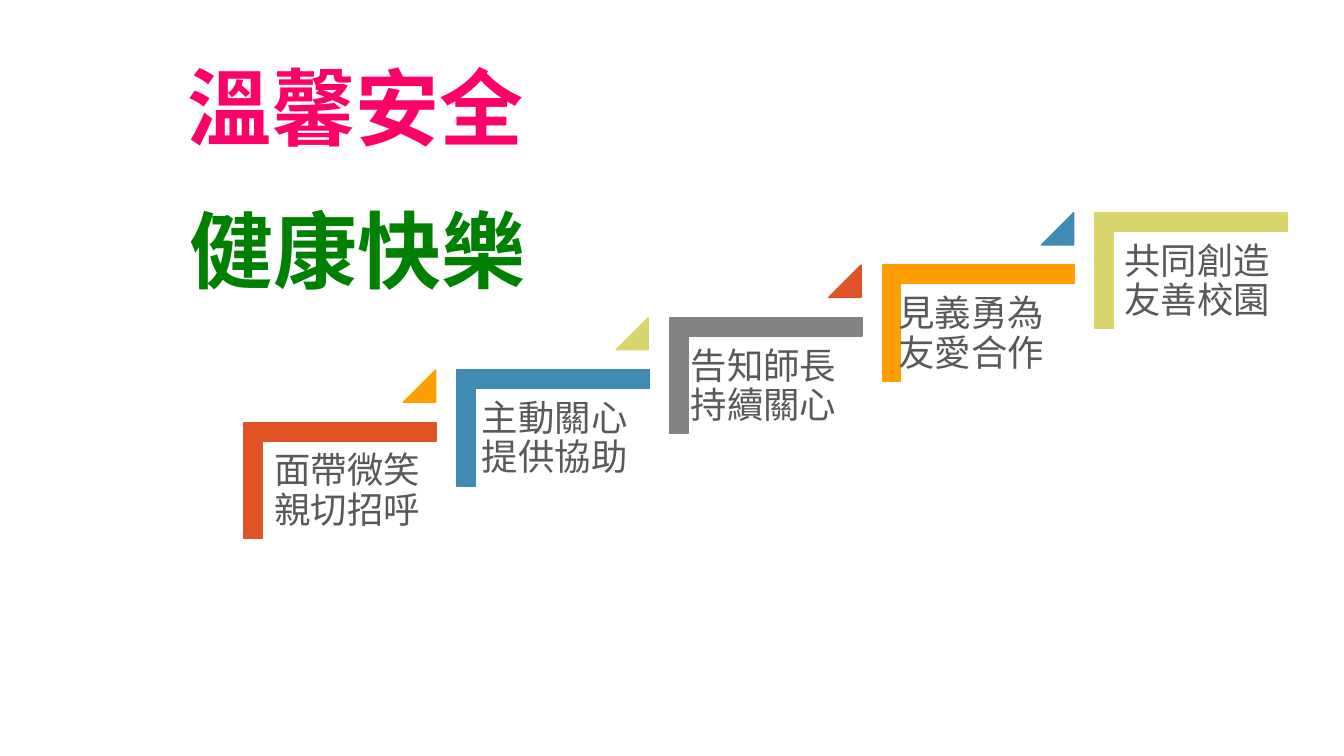
from lxml import etree
from pptx import Presentation
from pptx import util as u
from pptx.dml.color import RGBColor
from pptx.enum import shapes, text
from pptx.oxml import ns

FONT = "Noto Sans CJK SC"
STEP_ACROSS, STEP_UP = 2.11, 0.52
CORNER_WIDTH, CORNER_HEIGHT, CORNER_ADJUST = 1.15, 1.91, 0.16
TRIANGLE = 0.32


def paint(item, color):
    item.fill.solid()
    item.fill.fore_color.rgb = RGBColor.from_string(color)
    item.line.color.rgb = RGBColor.from_string(color)
    item.line.width = u.Pt(1)
    item.shadow.inherit = False


def write(page, words, place, size, color, bold=False):
    box = page.shapes.add_textbox(*[u.Inches(length) for length in place])
    frame = box.text_frame
    frame.word_wrap = True
    frame.text = words
    para = frame.paragraphs[0]
    para.line_spacing = 0.9
    span = para.runs[0]
    span.font.size = u.Pt(size)
    span.font.bold = bold
    span.font.name = FONT
    span.font.color.rgb = RGBColor.from_string(color)
    east_asian = etree.SubElement(span.font._element, ns.qn("a:ea"))
    east_asian.set("typeface", FONT)
    return frame


deck = Presentation()
deck.slide_width, deck.slide_height = u.Inches(13.33), u.Inches(7.5)
page = deck.slides.add_slide(deck.slide_layouts[6])

headings = [("溫馨安全", 0.57, 0.19, "FF0066"), ("健康快樂", 0.59, 1.61, "008000")]
for words, left, top, color in headings:
    frame = write(page, words, (left, top, 5.91, 1.42), 60, color, True)
    frame.vertical_anchor = text.MSO_ANCHOR.BOTTOM
    frame.paragraphs[0].alignment = text.PP_ALIGN.CENTER

steps = [
    ("面帶微笑親切招呼", "DF5327", 2.61, 1.72),
    ("主動關心提供協助", "418AB3", 4.67, 1.81),
    ("告知師長持續關心", "838383", 6.74, 1.88),
    ("見義勇為友愛合作", "FE9E00", 8.8, 1.98),
    ("共同創造友善校園", "D9D66D", 11.04, 1.72),
]
triangle_colors = ["FE9E00", "D9D66D", "DF5327", "418AB3"]

for index, (words, color, text_left, text_width) in enumerate(steps):
    left = 2.8 + index * STEP_ACROSS
    top = 3.81 - index * STEP_UP

    corner = page.shapes.add_shape(
        shapes.MSO_SHAPE.CORNER, u.Inches(left), u.Inches(top),
        u.Inches(CORNER_WIDTH), u.Inches(CORNER_HEIGHT))
    corner.rotation = 90
    corner.adjustments[0] = corner.adjustments[1] = CORNER_ADJUST
    paint(corner, color)

    frame = write(page, words, (text_left, top + 0.57, text_width, 1.51), 26, "595959")
    frame.margin_left = frame.margin_right = u.Inches(0.11)
    frame.margin_top = frame.margin_bottom = u.Inches(0.11)

    if index < len(triangle_colors):
        triangle = page.shapes.add_shape(
            shapes.MSO_SHAPE.ISOSCELES_TRIANGLE, u.Inches(left + 1.2),
            u.Inches(top - 0.14), u.Inches(TRIANGLE), u.Inches(TRIANGLE))
        triangle.adjustments[0] = 1
        paint(triangle, triangle_colors[index])

deck.save("out.pptx")
